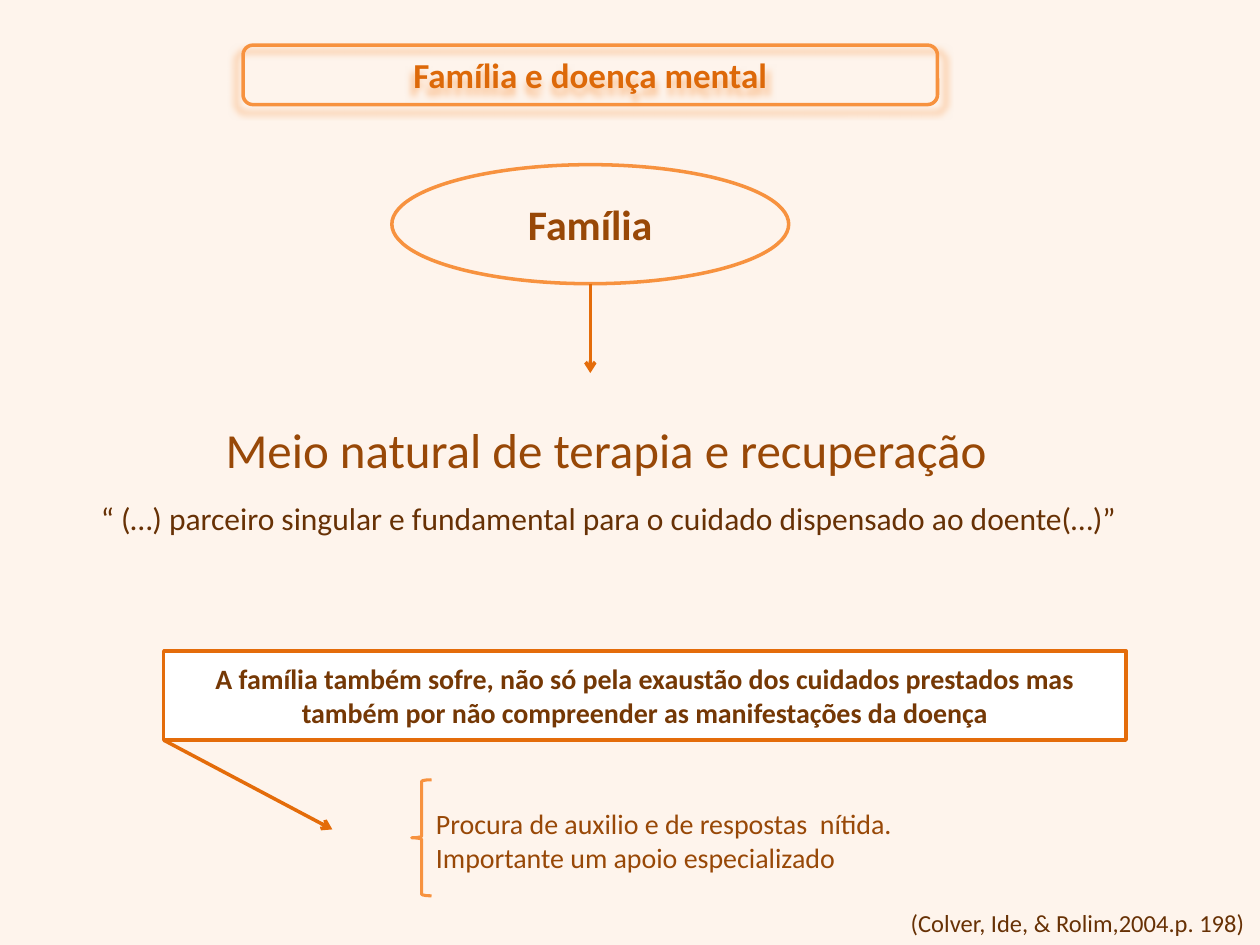
from lxml.etree import SubElement as Sub
from pptx import Presentation
from pptx.dml.color import RGBColor as RGB
from pptx.enum.shapes import MSO_CONNECTOR as LINK, MSO_SHAPE as SHAPE
from pptx.enum.text import MSO_ANCHOR as ANCHOR, PP_ALIGN as ALIGN
from pptx.oxml.ns import qn
from pptx.util import Cm, Pt

HUE = {
    "back": "FEF4EC", "white": "FFFFFF", "glow": "FAC090",
    "edge": "F7923F", "dark": "E46C0A", "title": "DD6909",
    "brown": "984807", "deep": "673105", "note": "753805",
}


def write(shape, lines, size, hue, bold=False, align=ALIGN.CENTER,
          anchor=ANCHOR.MIDDLE, wrap=True):
    frame = shape.text_frame
    frame.text = "\n".join(lines)
    frame.word_wrap = wrap
    frame.vertical_anchor = anchor
    for para in frame.paragraphs:
        para.alignment = align
        font = para.font
        font.name, font.size, font.bold = "Calibri", Pt(size), bold
        font.color.rgb = RGB.from_string(HUE[hue])


def outline(kind, box, hue, width=2, fill=None):
    shape = slide.shapes.add_shape(kind, *map(Cm, box))
    shape.shadow.inherit = False
    shape.line.color.rgb = RGB.from_string(HUE[hue])
    shape.line.width = Pt(width)
    if fill:
        shape.fill.solid()
        shape.fill.fore_color.rgb = RGB.from_string(HUE[fill])
    else:
        shape.fill.background()
    return shape


deck = Presentation()
deck.slide_width, deck.slide_height = Cm(25.4), Cm(19.05)
slide = deck.slides.add_slide(deck.slide_layouts[6])
slide.background.fill.solid()
slide.background.fill.fore_color.rgb = RGB.from_string(HUE["back"])

# Title with a soft shadow below it
title = outline(SHAPE.ROUNDED_RECTANGLE, (4.9, 0.91, 14, 1.2), "edge")
write(title, ["Família e doença mental"], 20, "title", bold=True)
effect = title._element.spPr.find(qn("a:effectLst"))
shade = Sub(effect, qn("a:outerShdw"), blurRad=str(Pt(4)), dist=str(Pt(4)),
            dir="5400000", sx="102000", sy="102000", algn="ctr",
            rotWithShape="0")
Sub(shade, qn("a:srgbClr"), val=HUE["glow"])

# Family and its burden
family = outline(SHAPE.OVAL, (7.9, 3.32, 8, 2.4), "edge")
write(family, ["Família"], 24, "brown", bold=True)
burden = outline(SHAPE.RECTANGLE, (3.3, 13.12, 19.4, 1.8), "dark", fill="white")
write(burden, ["A família também sofre, não só pela exaustão dos cuidados "
               "prestados mas também por não compreender as manifestações "
               "da doença"], 16, "note", bold=True)

# Arrows
for ends in ((11.9, 5.72, 11.9, 7.52), (3.3, 14.92, 6.7, 16.72)):
    arrow = slide.shapes.add_connector(LINK.STRAIGHT, *map(Cm, ends))
    arrow.line.color.rgb = RGB.from_string(HUE["dark"])
    arrow.line.width = Pt(2)
    Sub(arrow.line._get_or_add_ln(), qn("a:tailEnd"), type="arrow")
    Sub(arrow._element.spPr, qn("a:effectLst"))

# Brace beside the advice
outline(SHAPE.LEFT_BRACE, (8.3, 15.72, 0.4, 2.34), "edge", width=1.75)

# Plain texts: box, lines, size, colour, alignment, anchor, wrap
texts = [
    ((1.3, 9.93, 21.95, 2.39),
     ["“ (…) parceiro singular e fundamental para o cuidado dispensado "
      "ao doente(…)”"], 18, "deep", ALIGN.CENTER, ANCHOR.TOP, True),
    ((4.3, 8.33, 16.23, 1.45), ["Meio natural de terapia e recuperação"],
     28, "brown", ALIGN.LEFT, ANCHOR.TOP, False),
    ((7.29, 16.13, 11.07, 1.63),
     ["Procura de auxilio e de respostas  nítida.",
      "Importante um apoio especializado"],
     16, "brown", ALIGN.JUSTIFY, ANCHOR.MIDDLE, False),
    ((18.11, 18.19, 7.29, 0.86), ["(Colver, Ide, & Rolim,2004.p. 198)"],
     14, "deep", ALIGN.LEFT, ANCHOR.TOP, False),
]
for box, lines, size, hue, align, anchor, wrap in texts:
    text = slide.shapes.add_textbox(*map(Cm, box))
    write(text, lines, size, hue, align=align, anchor=anchor, wrap=wrap)
    if align == ALIGN.JUSTIFY:
        for para in text.text_frame.paragraphs:
            para._p.get_or_add_pPr().set("indent", str(Cm(1.25)))

deck.save("out.pptx")
